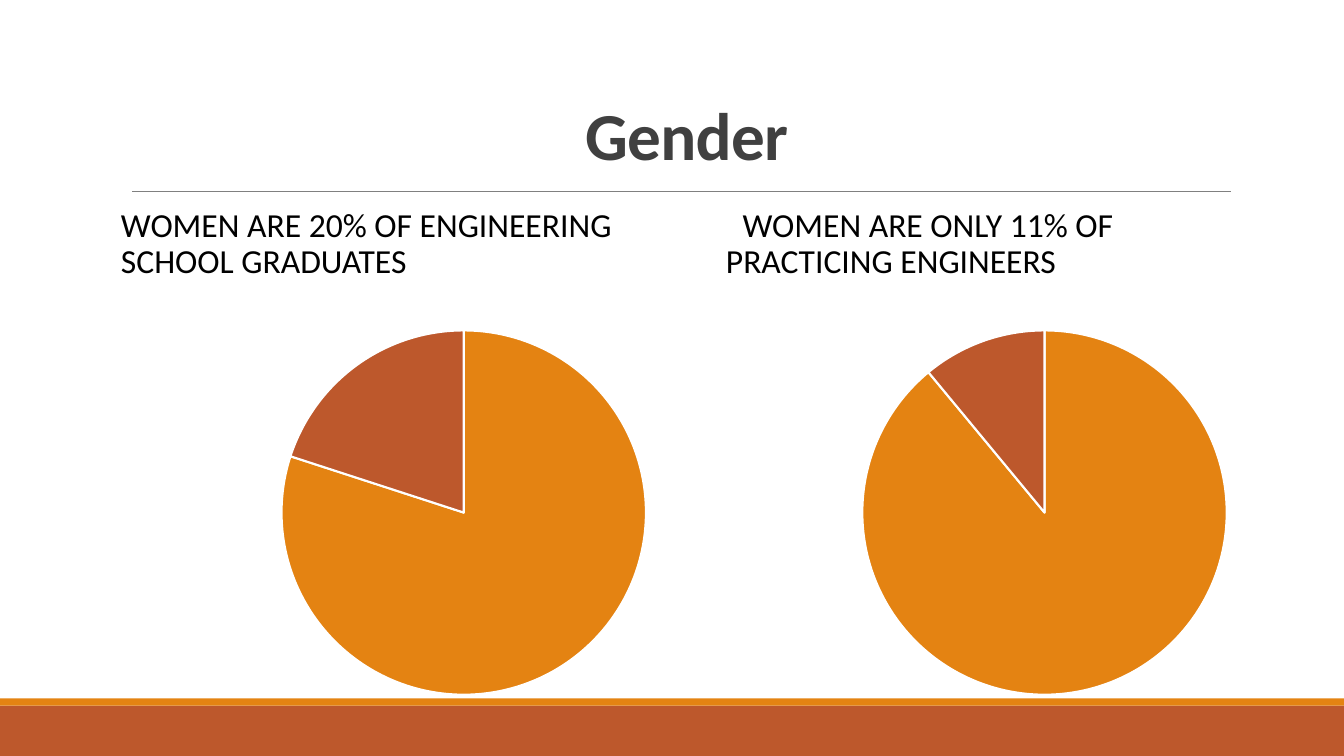
from lxml import etree
from pptx import Presentation
from pptx.chart.data import CategoryChartData
from pptx.dml.color import RGBColor
from pptx.enum.chart import XL_CHART_TYPE as ChartType
from pptx.enum.shapes import MSO_CONNECTOR as Connector, MSO_SHAPE as Shape
from pptx.enum.text import MSO_ANCHOR as Anchor, PP_ALIGN as Align
from pptx.oxml.ns import qn
from pptx.util import Inches, Pt

COLORS = {
    "orange": "E48312",
    "rust": "BD582C",
    "rule": "808080",
    "title": "404040",
    "text": "000000",
    "white": "FFFFFF",
}
FONT = "Calibri"


def color(name):
    return RGBColor.from_string(COLORS[name])


def style(font, size, color_name, bold=False):
    font.name = FONT
    font.size = Pt(size)
    font.bold = bold
    font.color.rgb = color(color_name)


deck = Presentation()
deck.slide_width, deck.slide_height = Inches(13.33), Inches(7.5)
page = deck.slides.add_slide(deck.slide_layouts[5])

# Footer bands and rule under the title
for top, height, fill in [(7, 0.5, "rust"), (6.93, 0.07, "orange")]:
    band = page.shapes.add_shape(
        Shape.RECTANGLE, 0, Inches(top), deck.slide_width, Inches(height))
    band.shadow.inherit = False
    band.fill.solid()
    band.fill.fore_color.rgb = color(fill)
    band.line.fill.background()

rule = page.shapes.add_connector(
    Connector.STRAIGHT, Inches(1.31), Inches(1.9), Inches(12.21), Inches(1.9))
rule.line.color.rgb = color("rule")
rule.line.width = Pt(0.5)
etree.SubElement(rule._element.spPr, qn("a:effectLst"))

# Title
title = page.shapes.title
title.left, title.top = Inches(1.31), Inches(0.19)
title.width, title.height = Inches(11), Inches(1.59)
title.text_frame.vertical_anchor = Anchor.BOTTOM
para = title.text_frame.paragraphs[0]
para.alignment = Align.CENTER
para.line_spacing = 0.85
span = para.add_run()
span.text = "Gender"
style(span.font, 48, "title", bold=True)
span.font._element.set("spc", "-50")

# Captions
captions = [
    (1.2, 0.81, "WOMEN ARE 20% OF ENGINEERING SCHOOL GRADUATES", False),
    (7.2, 3.69, "WOMEN ARE ONLY 11% OF PRACTICING ENGINEERS", True),
]
for left, height, words, has_blank_bullet in captions:
    box = page.shapes.add_textbox(
        Inches(left), Inches(2.02), Inches(5.4), Inches(height))
    frame = box.text_frame
    frame.word_wrap = True
    frame.margin_left = frame.margin_right = 0
    para = frame.paragraphs[0]
    para.line_spacing = 0.9
    para.space_before = Pt(6)
    span = para.add_run()
    span.text = words
    style(span.font, 24, "text")
    if has_blank_bullet:
        properties = para._p.get_or_add_pPr()
        properties.set("marL", "0")
        properties.set("indent", str(-Inches(0.12)))
        etree.SubElement(properties, qn("a:buChar")).set("char", " ")

# Pie charts
for left, shares in [(2.41, (80, 20)), (8.17, (89, 11))]:
    data = CategoryChartData()
    data.categories = ["1", "2"]
    data.add_series("Series 1", shares)
    chart = page.shapes.add_chart(
        ChartType.PIE, Inches(left), Inches(3.14), Inches(4.38), Inches(3.89),
        data).chart
    chart.has_title = False
    chart.has_legend = False
    style(chart.font, 10, "text")
    plot = chart.plots[0]
    plot.vary_by_categories = True
    for index, fill in enumerate(["orange", "rust"]):
        wedge = plot.series[0].points[index].format
        wedge.fill.solid()
        wedge.fill.fore_color.rgb = color(fill)
        wedge.line.color.rgb = color("white")
        wedge.line.width = Pt(1.5)

deck.save("out.pptx")
